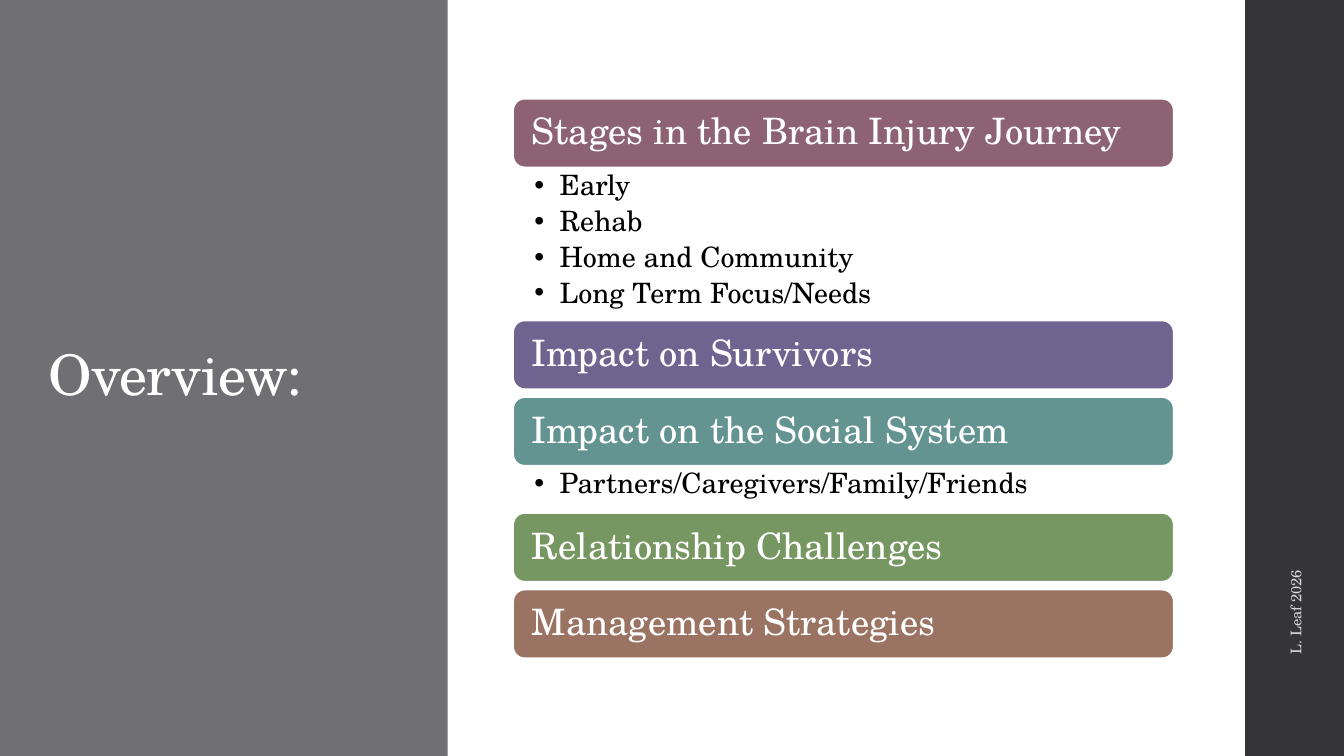
"""Build the Overview slide: a title panel, coloured topic bars and a credit strip."""
from dataclasses import dataclass

from pptx import Presentation
from pptx.dml.color import RGBColor
from pptx.enum.shapes import MSO_SHAPE
from pptx.enum.text import MSO_ANCHOR, MSO_AUTO_SIZE, PP_ALIGN
from pptx.util import Pt

TITLE = "Overview:"
CREDIT = "L. Leaf 2026"
TOPICS = [
    ("Stages in the Brain Injury Journey", "8D6374",
     ["Early", "Rehab", "Home and Community", "Long Term Focus/Needs"]),
    ("Impact on Survivors", "6F6390", []),
    ("Impact on the Social System", "639491", ["Partners/Caregivers/Family/Friends"]),
    ("Relationship Challenges", "769762", []),
    ("Management Strategies", "9B7362", []),
]


@dataclass(frozen=True)
class Theme:
    font: str = "TeX Gyre Schola"
    white: str = "FFFFFF"
    black: str = "000000"
    panel: str = "6F6F74"
    strip: str = "353537"
    credit: str = "D9D9DB"
    title_size: float = 40
    bar_size: float = 26
    list_size: float = 20
    credit_size: float = 10.5


T = Theme()
PX = 9144
SLIDE_W, SLIDE_H = 1333, 750
PANEL_W, STRIP_X = 444, 1235
BAR_X, BAR_Y, BAR_W, BAR_H, GAP = 509, 98, 655, 68, 8
LIST_BASE, LIST_LINE = 12, 35
HANG = 25


def place(sp, x, y, w, h):
    sp.left, sp.top, sp.width, sp.height = (v * PX for v in (x, y, w, h))


def add_block(s, kind, box, color):
    sp = s.shapes.add_shape(kind, *(v * PX for v in box))
    sp.shadow.inherit = False
    sp.fill.solid()
    sp.fill.fore_color.rgb = RGBColor.from_string(color)
    sp.line.fill.background()
    return sp


def write(sp, lines, size, color, anchor=MSO_ANCHOR.MIDDLE, insets=(10, 5, 10, 5), spacing=0.9):
    tf = sp.text_frame
    tf.text = "\n".join(lines)
    tf.word_wrap = True
    tf.auto_size = MSO_AUTO_SIZE.NONE
    tf.vertical_anchor = anchor
    tf.margin_left, tf.margin_top, tf.margin_right, tf.margin_bottom = (v * PX for v in insets)
    for p in tf.paragraphs:
        p.alignment = PP_ALIGN.LEFT
        p.line_spacing = spacing
        p.space_before = Pt(0)
        p.font.name = T.font
        p.font.size = Pt(size)
        p.font.color.rgb = RGBColor.from_string(color)
    return tf


def add_bar(s, label, color, y):
    bar = add_block(s, MSO_SHAPE.ROUNDED_RECTANGLE, (BAR_X, y, BAR_W, BAR_H), color)
    bar.line.color.rgb = RGBColor.from_string(T.white)
    bar.line.width = Pt(1.1)
    write(bar, [label], T.bar_size, T.white, insets=(15, 11, 15, 11))


def fill_list(sp, items, y, h):
    place(sp, BAR_X, y, BAR_W, h)
    tf = write(sp, items, T.list_size, T.black, MSO_ANCHOR.TOP, (21, 4, 20, 4))
    for p in tf.paragraphs:
        p.space_after = Pt(4)
        pPr = p._p.get_or_add_pPr()
        pPr.set("marL", str(HANG * PX))
        pPr.set("indent", str(-HANG * PX))


def main():
    prs = Presentation()
    prs.slide_width, prs.slide_height = SLIDE_W * PX, SLIDE_H * PX
    s = prs.slides.add_slide(prs.slide_layouts.get_by_name("Two Content"))
    title, *bodies = s.placeholders

    add_block(s, MSO_SHAPE.RECTANGLE, (0, 0, PANEL_W, SLIDE_H), T.panel)
    add_block(s, MSO_SHAPE.RECTANGLE, (STRIP_X, 0, SLIDE_W - STRIP_X, SLIDE_H), T.strip)
    s.shapes.element.append(title.element)
    place(title, 38, 91, 371, 567)
    tf = write(title, [TITLE], T.title_size, T.white)
    tf.paragraphs[0].runs[0].font._element.set("spc", "-50")

    free_bodies = iter(bodies)
    y = BAR_Y
    for label, color, items in TOPICS:
        add_bar(s, label, color, y)
        y += BAR_H
        if items:
            h = LIST_BASE + LIST_LINE * len(items)
            fill_list(next(free_bodies), items, y, h)
            y += h
        else:
            y += GAP

    credit = s.shapes.add_textbox(*(v * PX for v in (1089, 443, 392, 40)))
    credit.rotation = 270
    write(credit, [CREDIT], T.credit_size, T.credit, spacing=1.0)
    prs.save("out.pptx")


if __name__ == "__main__":
    main()
